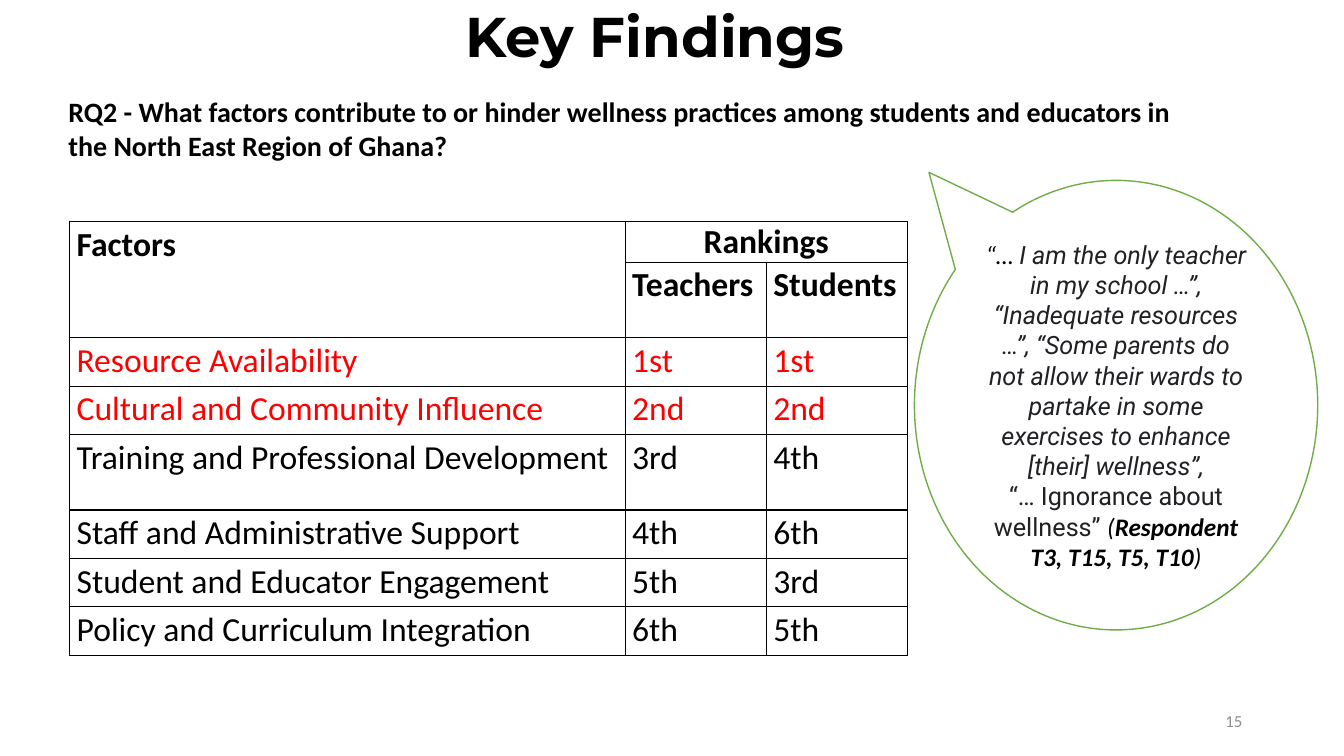
import pptx
import pptx.util
import pptx.dml.color
import pptx.enum.shapes
import pptx.enum.text
import pptx.oxml
import pptx.oxml.ns

inch = pptx.util.Inches
ALIGN = pptx.enum.text.PP_ALIGN
ANCHOR = pptx.enum.text.MSO_ANCHOR

TITLE = "Key Findings"
QUESTION = ("RQ2 - What factors contribute to or hinder wellness practices among "
            "students and educators in the North East Region of Ghana?")
PAGE = "15"
HEADS = [("Factors", "Rankings", ""), ("", "Teachers", "Students")]
RANKS = [
    ("Resource Availability", "1st", "1st"),
    ("Cultural and Community Influence", "2nd", "2nd"),
    ("Training and Professional Development", "3rd", "4th"),
    ("Staff and Administrative Support", "4th", "6th"),
    ("Student and Educator Engagement", "5th", "3rd"),
    ("Policy and Curriculum Integration", "6th", "5th"),
]
SHARED = 2  # leading factors on which both groups agree
COLS = [5.51, 1.4, 1.4]
ROWS = [0.4, 0.75, 0.48, 0.48, 0.75, 0.48, 0.48, 0.48]

ROBOTO = {"font": "Roboto", "color": "202124"}
QUOTE = [
    [("“… ", {"italic": True}),
     ("I am the only teacher in my school …”, “Inadequate resources …”, "
      "“Some parents do not allow their wards to partake in some exercises "
      "to enhance [their] wellness”,", {"italic": True, **ROBOTO})],
    [("“… Ignorance about wellness” ", ROBOTO),
     ("(", {"italic": True}),
     ("Respondent T3, T15, T5, T10", {"italic": True, "bold": True}),
     (")", {"italic": True})],
]


def rgb(code):
    return pptx.dml.color.RGBColor.from_string(code)


def write(para, text, size=24, font="Calibri", color="000000", bold=False,
          italic=False, align=ALIGN.LEFT, lines=None, after=None):
    """Add a formatted run and set the format of its paragraph."""
    para.alignment = align
    if lines:
        para.line_spacing = lines
    if after:
        para.space_after = pptx.util.Pt(after)
    run = para.add_run()
    run.text = text
    face = run.font
    face.size, face.name = pptx.util.Pt(size), font
    face.bold, face.italic = bold, italic
    face.color.rgb = rgb(color)


def label(slide, box, text, anchor=ANCHOR.TOP, **form):
    frame = slide.shapes.add_textbox(*map(inch, box)).text_frame
    frame.word_wrap = True
    frame.vertical_anchor = anchor
    write(frame.paragraphs[0], text, **form)


def border(cell, color="000000", width=1):
    props = cell._tc.get_or_add_tcPr()
    for spot, side in enumerate(("lnL", "lnR", "lnT", "lnB")):
        props.insert(spot, pptx.oxml.parse_xml(
            f'<a:{side} {pptx.oxml.ns.nsdecls("a")} w="{pptx.util.Pt(width)}">'
            f'<a:solidFill><a:srgbClr val="{color}"/></a:solidFill></a:{side}>'))


def ranking(slide):
    grid = slide.shapes.add_table(
        len(ROWS), len(COLS), inch(0.69), inch(2.2),
        inch(sum(COLS)), inch(sum(ROWS))).table
    grid.first_row = grid.horz_banding = False
    for col, width in zip(grid.columns, COLS):
        col.width = inch(width)
    for row, height in zip(grid.rows, ROWS):
        row.height = inch(height)
    grid.cell(0, 0).merge(grid.cell(1, 0))
    grid.cell(0, 1).merge(grid.cell(0, 2))
    top = len(HEADS)
    for r, texts in enumerate(HEADS + RANKS):
        color = "FF0000" if top <= r < top + SHARED else "000000"
        for c, text in enumerate(texts):
            cell = grid.cell(r, c)
            cell.fill.solid()
            cell.fill.fore_color.rgb = rgb("FFFFFF")
            border(cell)
            cell.margin_left = cell.margin_right = inch(0.07)
            cell.margin_top = cell.margin_bottom = 0
            if not text:
                continue
            if cell.is_merge_origin and cell.span_width > 1:
                form = {"align": ALIGN.CENTER}
            else:
                form = {"lines": 1.07, "after": 8}
            write(cell.text_frame.paragraphs[0], text, color=color,
                  bold=r < top, **form)


def bubble(slide):
    shape = slide.shapes.add_shape(
        pptx.enum.shapes.MSO_SHAPE.OVAL_CALLOUT,
        *map(inch, (9.07, 1.79, 4, 4.46)))
    shape.adjustments[0], shape.adjustments[1] = -0.464, -0.518
    shape.shadow.inherit = False
    shape.fill.solid()
    shape.fill.fore_color.rgb = rgb("FFFFFF")
    shape.line.color.rgb = rgb("70AD47")
    shape.line.width = pptx.util.Pt(1)
    frame = shape.text_frame
    frame.word_wrap = True
    frame.vertical_anchor = ANCHOR.MIDDLE
    for n, runs in enumerate(QUOTE):
        para = frame.add_paragraph() if n else frame.paragraphs[0]
        for text, form in runs:
            write(para, text, size=18, align=ALIGN.CENTER, **form)


def main():
    deck = pptx.Presentation()
    deck.slide_width, deck.slide_height = inch(13.33), inch(7.5)
    slide = deck.slides.add_slide(deck.slide_layouts.get_by_name("Title Only"))
    title = slide.shapes.title
    title.left, title.top, title.width, title.height = map(
        inch, (0.12, 0.03, 12.76, 0.72))
    title.text_frame.vertical_anchor = ANCHOR.MIDDLE
    write(title.text_frame.paragraphs[0], TITLE, size=40, font="Montserrat",
          bold=True, align=ALIGN.CENTER, lines=0.9)
    label(slide, (9.42, 6.95, 3, 0.4), PAGE, anchor=ANCHOR.MIDDLE, size=12,
          color="8C8C8C", align=ALIGN.RIGHT)
    label(slide, (0.58, 0.89, 11.33, 1.11), QUESTION, size=20, bold=True)
    ranking(slide)
    bubble(slide)
    deck.save("out.pptx")


if __name__ == "__main__":
    main()
